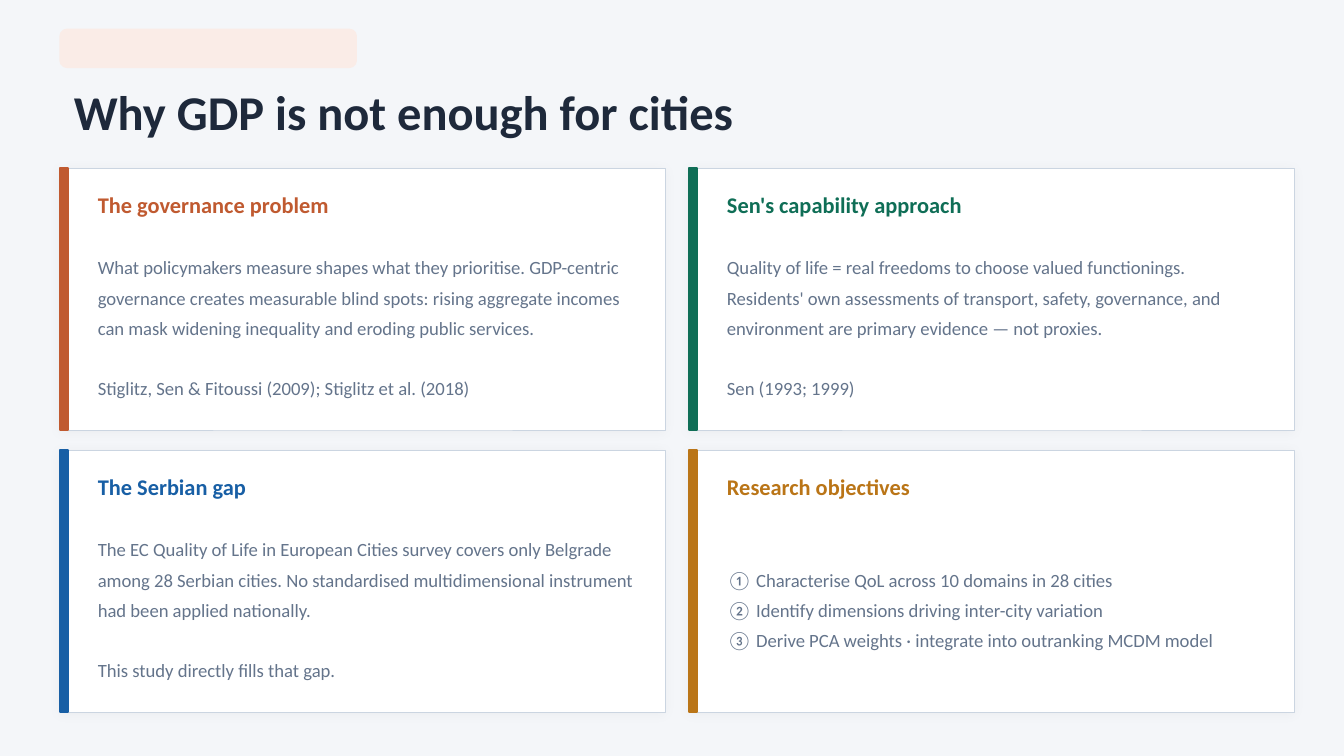
from lxml import etree
from pptx import Presentation
from pptx.dml.color import RGBColor
from pptx.enum.shapes import MSO_SHAPE
from pptx.enum.text import MSO_ANCHOR, MSO_AUTO_SIZE, PP_ALIGN
from pptx.oxml import parse_xml
from pptx.oxml.ns import nsdecls, qn
from pptx.util import Cm, Pt

RECTANGLE = MSO_SHAPE.RECTANGLE
ROUNDED = MSO_SHAPE.ROUNDED_RECTANGLE
MIDDLE = MSO_ANCHOR.MIDDLE
NO_AUTOFIT = MSO_AUTO_SIZE.NONE
LEFT = PP_ALIGN.LEFT

FONT = "Calibri"
BACKGROUND = RGBColor(0xF4, 0xF6, 0xF9)
TAG = RGBColor(0xFA, 0xEC, 0xE7)
INK = RGBColor(0x1E, 0x29, 0x3B)
BODY = RGBColor(0x64, 0x74, 0x8B)
WHITE = RGBColor(0xFF, 0xFF, 0xFF)
BORDER = RGBColor(0xCB, 0xD5, 0xE1)
RUST = RGBColor(0xC0, 0x5A, 0x30)
GREEN = RGBColor(0x0F, 0x6E, 0x56)
BLUE = RGBColor(0x18, 0x5F, 0xA5)
AMBER = RGBColor(0xBA, 0x75, 0x17)

MARGIN = Cm(1.14)
CARDS_TOP = Cm(3.18)
CARD_WIDTH, CARD_HEIGHT = Cm(11.43), Cm(4.95)
COLUMN_GAP, ROW_GAP = Cm(0.46), Cm(0.38)
BLANK_LINE = Pt(16.2)

# heading, accent colour, paragraphs, space between paragraphs
CARDS = [
    ("The governance problem", RUST,
     ["What policymakers measure shapes what they prioritise. GDP-centric "
      "governance creates measurable blind spots: rising aggregate incomes "
      "can mask widening inequality and eroding public services.",
      "Stiglitz, Sen & Fitoussi (2009); Stiglitz et al. (2018)"], BLANK_LINE),
    ("Sen's capability approach", GREEN,
     ["Quality of life = real freedoms to choose valued functionings. "
      "Residents' own assessments of transport, safety, governance, and "
      "environment are primary evidence — not proxies.",
      "Sen (1993; 1999)"], BLANK_LINE),
    ("The Serbian gap", BLUE,
     ["The EC Quality of Life in European Cities survey covers only Belgrade "
      "among 28 Serbian cities. No standardised multidimensional instrument "
      "had been applied nationally.",
      "This study directly fills that gap."], BLANK_LINE),
    ("Research objectives", AMBER,
     ["① Characterise QoL across 10 domains in 28 cities",
      "② Identify dimensions driving inter-city variation",
      "③ Derive PCA weights · integrate into outranking MCDM model"], Pt(0)),
]


def add_block(slide, kind, box, fill, line, line_width):
    shape = slide.shapes.add_shape(kind, *box)
    shape.shadow.inherit = False
    shape.fill.solid()
    shape.fill.fore_color.rgb = fill
    shape.line.color.rgb = line
    shape.line.width = line_width
    return shape


def add_soft_shadow(shape):
    properties = shape.element.spPr
    properties.remove(properties.find(qn("a:effectLst")))
    properties.append(parse_xml(
        f'<a:effectLst {nsdecls("a")}>'
        f'<a:outerShdw blurRad="{Pt(6)}" dist="{Pt(1)}" dir="8100000" '
        'algn="bl" rotWithShape="0"><a:srgbClr val="000000">'
        '<a:alpha val="4000"/></a:srgbClr></a:outerShdw></a:effectLst>'))


def write_text(shape, box, texts, size, color, bold=False, spacing=1.0, gap=Pt(0)):
    """Place a text box or placeholder and fill it with plain paragraphs."""
    shape.left, shape.top, shape.width, shape.height = box
    frame = shape.text_frame
    frame.word_wrap = True
    frame.auto_size = NO_AUTOFIT
    frame.vertical_anchor = MIDDLE
    frame.text = "\n".join(texts)
    for index, paragraph in enumerate(frame.paragraphs):
        properties = paragraph._p.get_or_add_pPr()
        properties.set("marL", "0")
        properties.set("indent", "0")
        etree.SubElement(properties, qn("a:buNone"))
        paragraph.alignment = LEFT
        paragraph.line_spacing = spacing
        paragraph.space_before = gap if index else Pt(0)
        paragraph.font.name = FONT
        paragraph.font.size = size
        paragraph.font.bold = bold
        paragraph.font.color.rgb = color


def add_header(slide, left, top, width):
    tag = add_block(slide, ROUNDED, (left, top, Cm(5.59), Cm(0.71)), TAG, TAG, Pt(1))
    tag.adjustments[0] = 0.18
    write_text(slide.shapes.title, (left, top + Cm(0.84), width, Cm(1.4)),
               ["Why GDP is not enough for cities"], Pt(26), INK, bold=True)


def add_card(slide, box, card, placeholder=None):
    """Draw one card; its body goes in the placeholder if one is given."""
    heading, accent, texts, gap = card
    left, top, width, height = box
    panel = add_block(slide, RECTANGLE, box, WHITE, BORDER, Pt(0.5))
    add_soft_shadow(panel)
    add_block(slide, RECTANGLE, (left, top, Cm(0.15), height), accent, accent, Pt(1))

    text_left, text_width = left + Cm(0.46), width - Cm(0.76)
    heading_box = (text_left, top + Cm(0.3), text_width, Cm(0.76))
    write_text(slide.shapes.add_textbox(*heading_box), heading_box,
               [heading], Pt(12), accent, bold=True)

    body_box = (text_left, top + Cm(1.19), text_width, Cm(3.51))
    if placeholder is None:
        body = slide.shapes.add_textbox(*body_box)
    else:
        body = placeholder
        panel.element.getparent().append(body.element)  # bring in front of the panel
    write_text(body, body_box, texts, Pt(10), BODY, spacing=1.35, gap=gap)


def add_card_grid(slide, left, top):
    for index, card in enumerate(CARDS):
        row, column = divmod(index, 2)
        box = (left + column * (CARD_WIDTH + COLUMN_GAP),
               top + row * (CARD_HEIGHT + ROW_GAP), CARD_WIDTH, CARD_HEIGHT)
        is_list = card is CARDS[-1]
        add_card(slide, box, card, slide.placeholders[1] if is_list else None)


def main():
    presentation = Presentation()
    presentation.slide_width, presentation.slide_height = Cm(25.4), Cm(14.29)
    slide = presentation.slides.add_slide(presentation.slide_layouts[1])
    slide.background.fill.solid()
    slide.background.fill.fore_color.rgb = BACKGROUND
    add_header(slide, MARGIN, Cm(0.56), Cm(23.11))
    add_card_grid(slide, MARGIN, CARDS_TOP)
    presentation.save("out.pptx")


if __name__ == "__main__":
    main()
